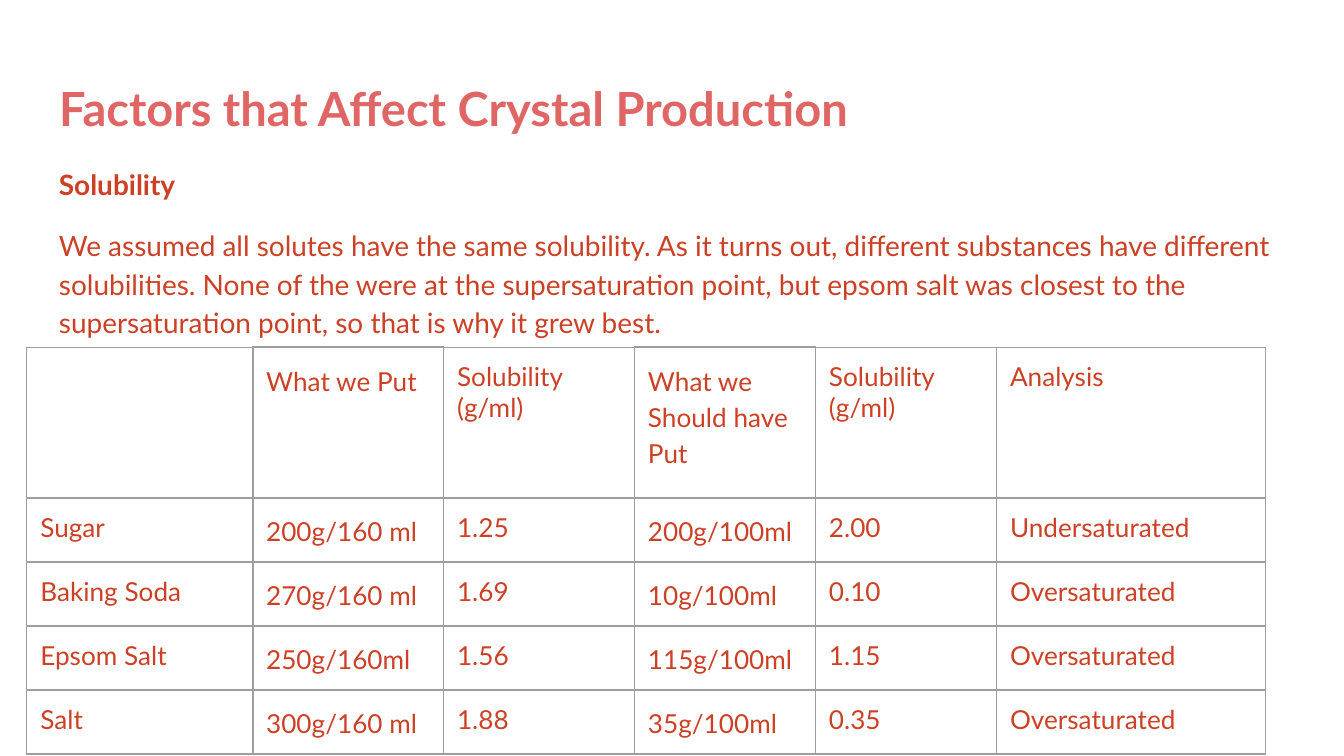
from lxml import etree
from pptx import Presentation
from pptx.dml.color import RGBColor
from pptx.enum.text import MSO_ANCHOR, MSO_AUTO_SIZE, PP_ALIGN
from pptx.oxml.ns import qn
from pptx.util import Pt

TOP = MSO_ANCHOR.TOP
LEFT = PP_ALIGN.LEFT
NO_FIT = MSO_AUTO_SIZE.NONE
TITLE_ONLY = 5

HEADER = ["", "What we Put", "Solubility (g/ml)", "What we Should have Put",
          "Solubility (g/ml)", "Analysis"]
SOLUTES = [
    ["Sugar", "200g/160 ml", "1.25", "200g/100ml", "2.00", "Undersaturated"],
    ["Baking Soda", "270g/160 ml", "1.69", "10g/100ml", "0.10", "Oversaturated"],
    ["Epsom Salt", "250g/160ml", "1.56", "115g/100ml", "1.15", "Oversaturated"],
    ["Salt", "300g/160 ml", "1.88", "35g/100ml", "0.35", "Oversaturated"],
]
PUT_COLS = (1, 3)
EXPLANATION = (
    "We assumed all solutes have the same solubility. As it turns out, "
    "different substances have different solubilities. None of the were at "
    "the supersaturation point, but epsom salt was closest to the "
    "supersaturation point, so that is why it grew best.")


def color(value):
    return RGBColor.from_string(value)


class SlideBuilder:
    font = "Lato"
    title_color = "E06666"
    text_color = "CC4125"
    grid_color = "9E9E9E"
    inset = Pt(7.2)

    def __init__(self, slide):
        self.s = slide

    def frame(self, tf):
        tf.word_wrap = True
        tf.auto_size = NO_FIT
        tf.vertical_anchor = TOP
        tf.margin_left = tf.margin_right = self.inset
        tf.margin_top = tf.margin_bottom = self.inset

    def run(self, p, text, size, hex_color, bold=False):
        p.alignment = LEFT
        r = p.add_run()
        r.text = text
        r.font.name = self.font
        r.font.size = Pt(size)
        r.font.bold = bold
        r.font.color.rgb = color(hex_color)

    def title(self, text, x, y, w, h):
        sp = self.s.shapes.title
        sp.left, sp.top, sp.width, sp.height = Pt(x), Pt(y), Pt(w), Pt(h)
        self.frame(sp.text_frame)
        self.run(sp.text_frame.paragraphs[0], text, 25.2, self.title_color, True)

    def body(self, heading, text, x, y, w, h):
        tf = self.s.shapes.add_textbox(Pt(x), Pt(y), Pt(w), Pt(h)).text_frame
        self.frame(tf)
        p = tf.paragraphs[0]
        p.line_spacing = 1.15
        self.run(p, heading, 15, self.text_color, True)
        p = tf.add_paragraph()
        p.line_spacing = 1.15
        p.space_before = Pt(12)
        self.run(p, text, 15, self.text_color)

    def border(self, cell, side, width):
        tc_pr = cell._tc.get_or_add_tcPr()
        ln = etree.SubElement(tc_pr, qn("a:ln" + side), w=str(Pt(width)))
        fill = etree.SubElement(ln, qn("a:solidFill"))
        etree.SubElement(fill, qn("a:srgbClr"), val=self.grid_color)

    def cell(self, cell, text, row, col):
        # Lines around the "put" columns are heavier
        put = col in PUT_COLS
        heavy = {"L": put or col - 1 in PUT_COLS,
                 "R": put or col + 1 in PUT_COLS, "T": put, "B": put}
        for side, is_heavy in heavy.items():
            self.border(cell, side, 1 if is_heavy else 0.75)
        cell.fill.background()
        cell.vertical_anchor = TOP
        cell.margin_left = cell.margin_right = self.inset
        cell.margin_top = cell.margin_bottom = self.inset
        p = cell.text_frame.paragraphs[0]
        if put:
            p.line_spacing = 1.15
            p.space_before = Pt(12)
            if col == PUT_COLS[1] and row > 0:
                p.space_after = Pt(12)
        if text:
            self.run(p, text, 14, self.text_color)

    def table(self, rows, x, y, widths, heights):
        table = self.s.shapes.add_table(
            len(rows), len(widths), Pt(x), Pt(y),
            Pt(sum(widths)), Pt(sum(heights))).table
        table.first_row = table.horz_banding = False
        for column, width in zip(table.columns, widths):
            column.width = Pt(width)
        for row, height in zip(table.rows, heights):
            row.height = Pt(height)
        for i, row in enumerate(rows):
            for j, text in enumerate(row):
                self.cell(table.cell(i, j), text, i, j)


def main():
    prs = Presentation()
    prs.slide_width, prs.slide_height = Pt(720), Pt(405)
    s = prs.slides.add_slide(prs.slide_layouts[TITLE_ONLY])
    s.background.fill.solid()
    s.background.fill.fore_color.rgb = color("FFFFFF")
    b = SlideBuilder(s)

    # Title and explanation
    b.title("Factors that Affect Crystal Production", 24.5, 35.3, 671, 45)
    b.body("Solubility", EXPLANATION, 24.5, 80, 671, 302.4)

    # Solubility comparison
    b.table([HEADER] + SOLUTES, 14.4, 186,
            [121, 102.3, 102.3, 97, 97, 144],
            [80.8] + [34.3] * len(SOLUTES))

    prs.save("out.pptx")


if __name__ == "__main__":
    main()
